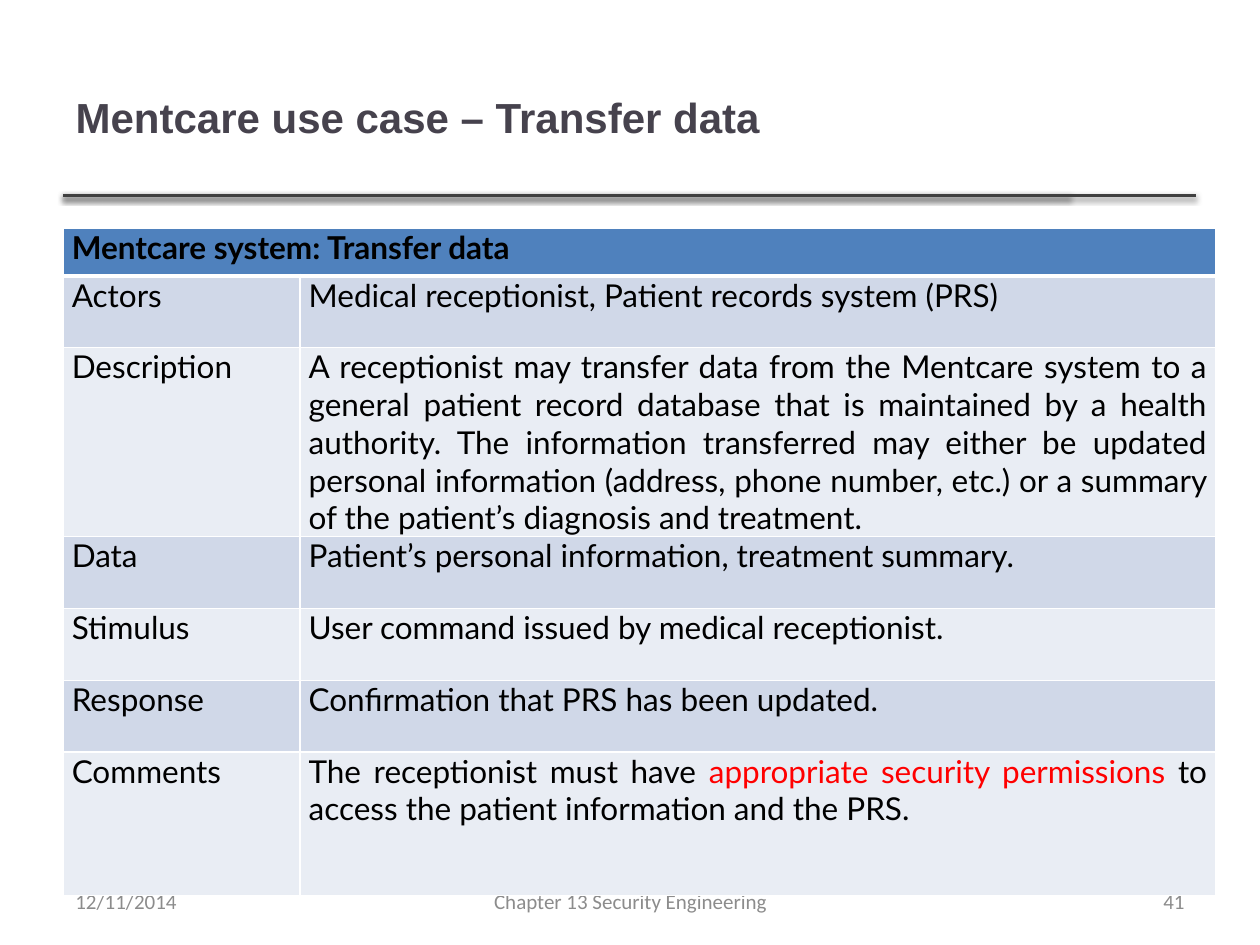
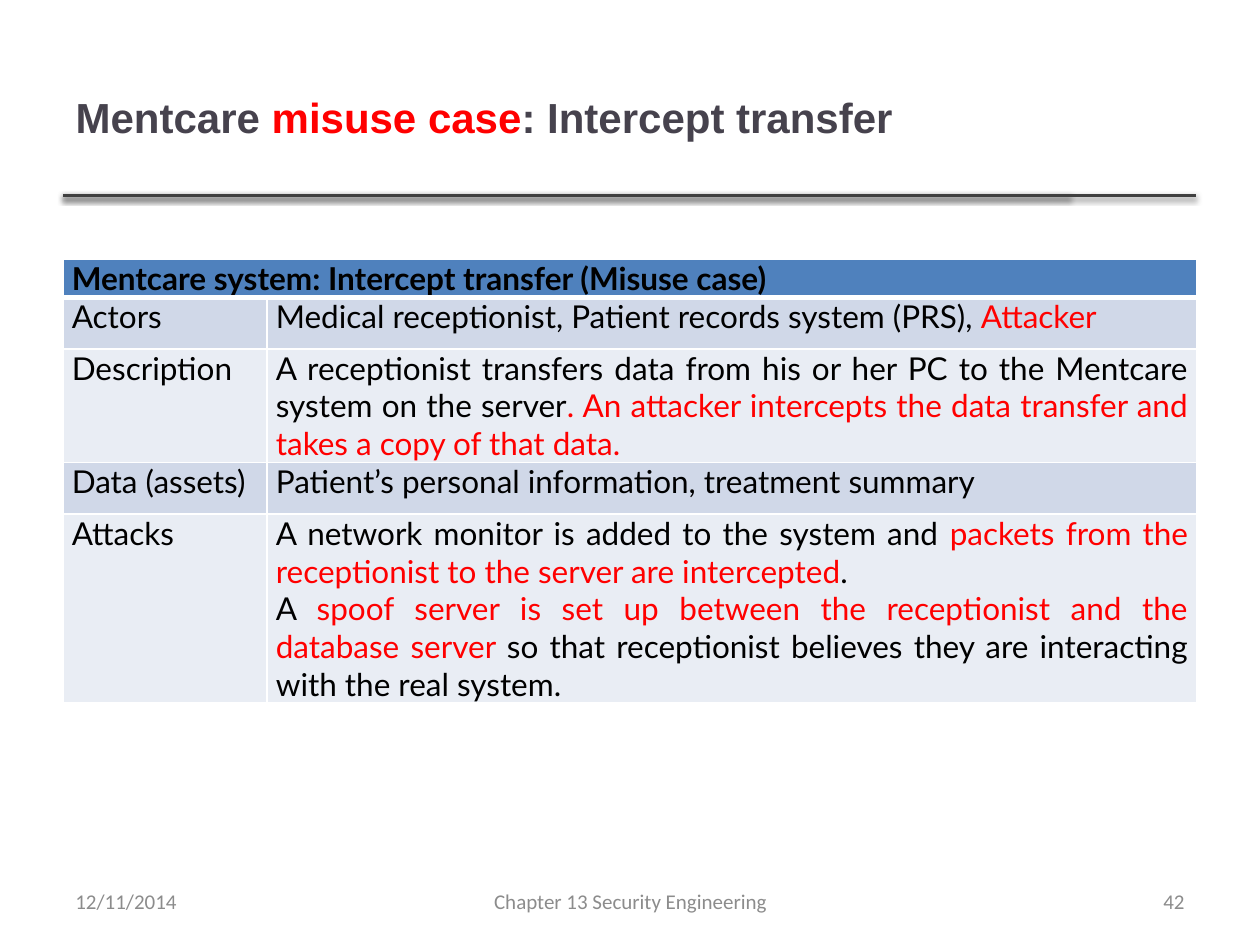
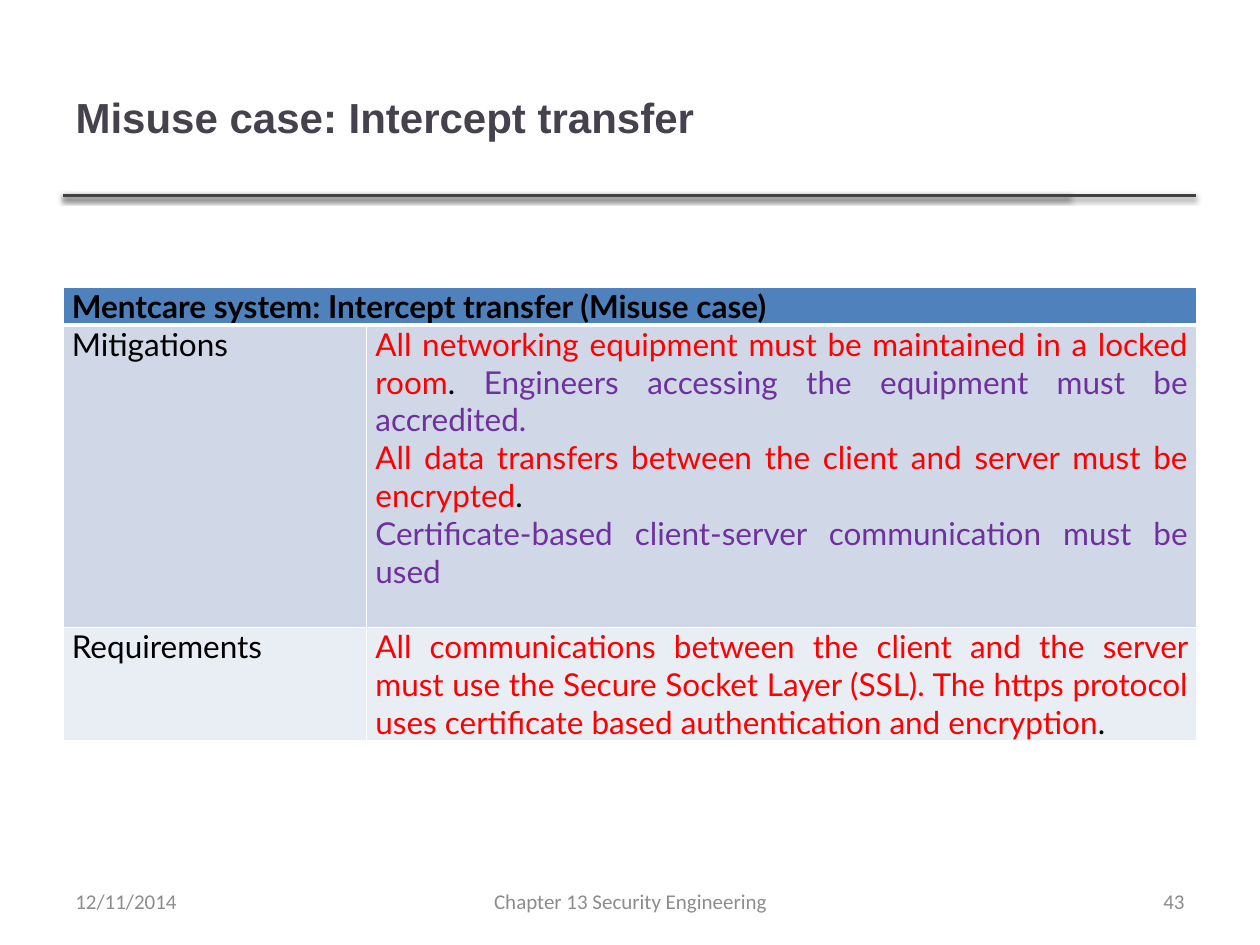
from lxml.etree import SubElement
from pptx import Presentation
from pptx.dml.color import RGBColor
from pptx.enum.shapes import MSO_CONNECTOR
from pptx.enum.text import MSO_ANCHOR, PP_ALIGN
from pptx.oxml import parse_xml
from pptx.oxml.ns import nsdecls, qn
from pptx.util import Inches, Pt

# Colours
SLATE = RGBColor(0x46, 0x42, 0x4D)
RULE = RGBColor(0x40, 0x40, 0x40)
GREY = RGBColor(0x8C, 0x8C, 0x8C)
BLACK = RGBColor(0, 0, 0)
RED = RGBColor(0xFF, 0, 0)
PURPLE = RGBColor(0x70, 0x30, 0xA0)
HEAD = RGBColor(0x4F, 0x81, 0xBD)
BANDS = [RGBColor(0xD0, 0xD8, 0xE8), RGBColor(0xE9, 0xED, 0xF4)]

# Content: a paragraph is a list of runs, a run is text or (text, colour)
SLIDES = [
    {
        "title": ["Mentcare use case – Transfer data"],
        "head": "Mentcare system: Transfer data",
        "top": 1.81, "cols": [1.88, 7.27],
        "heights": [0.38, 0.57, 1.5, 0.57, 0.57, 0.57, 1.14],
        "rows": [
            ("Actors", [["Medical receptionist, Patient records system (PRS)"]]),
            ("Description", [[
                "A receptionist may transfer data from the Mentcare system to a "
                "general patient record database that is maintained by a health "
                "authority. The information transferred may either be updated "
                "personal information (address, phone number, etc.) or a summary "
                "of the patient’s diagnosis and treatment."]]),
            ("Data", [["Patient’s personal information, treatment summary."]]),
            ("Stimulus", [["User command issued by medical receptionist."]]),
            ("Response", [["Confirmation that PRS has been updated."]]),
            ("Comments", [[
                "The receptionist must have ",
                ("appropriate security permissions", RED),
                " to access the patient information and the PRS."]]),
        ],
    },
    {
        "title": ["Mentcare ", ("misuse case", RED), ": Intercept transfer"],
        "head": "Mentcare system: Intercept transfer (Misuse case)",
        "top": 2.06, "cols": [1.62, 7.38],
        "heights": [0.3, 0.41, 0.9, 0.41, 1.5],
        "rows": [
            ("Actors", [["Medical receptionist, Patient records system (PRS), ",
                         ("Attacker", RED)]]),
            ("Description", [[
                "A receptionist transfers data from his or her PC to the Mentcare "
                "system on the server",
                (". An attacker intercepts the data transfer and takes a copy of "
                 "that data.", RED)]]),
            ("Data (assets)", [["Patient’s personal information, treatment summary"]]),
            ("Attacks", [
                ["A network monitor is added to the system and ",
                 ("packets from the receptionist to the server are intercepted", RED),
                 "."],
                ["A ",
                 ("spoof server is set up between the receptionist and the "
                  "database server ", RED),
                 "so that receptionist believes they are interacting with the "
                 "real system."]]),
        ],
    },
    {
        "title": ["Misuse case: Intercept transfer"],
        "head": "Mentcare system: Intercept transfer (Misuse case)",
        "top": 2.28, "cols": [2.41, 6.59],
        "heights": [0.3, 2.4, 0.9],
        "rows": [
            ("Mitigations", [
                [("All networking equipment must be maintained in a locked room", RED),
                 ". ",
                 ("Engineers accessing the equipment must be accredited.", PURPLE)],
                [("All data transfers between the client and server must be "
                  "encrypted", RED), "."],
                [("Certificate-based client-server communication must be used",
                  PURPLE)]]),
            ("Requirements", [[
                ("All communications between the client and the server must use "
                 "the Secure Socket Layer (SSL). The https protocol uses "
                 "certificate based authentication and encryption", RED), "."]]),
        ],
    },
]
FIRST = 41
LEFT = 0.5
RULE_Y = 1.55
RULE_ENDS = [8.49, 9.49]
FOOTER = [  # left, width, alignment, text
    (0.5, 2.33, PP_ALIGN.LEFT, "12/11/2014"),
    (3.42, 3.17, PP_ALIGN.CENTER, "Chapter 13 Security Engineering"),
    (7.17, 2.33, PP_ALIGN.RIGHT, "{page}"),
]


def write(frame, paras, face, size, color, bold=False, align=PP_ALIGN.LEFT):
    for i, runs in enumerate(paras):
        para = frame.paragraphs[0] if i == 0 else frame.add_paragraph()
        para.alignment = align
        para.font.name, para.font.size, para.font.bold = face, Pt(size), bold
        for item in runs:
            text, tint = (item, color) if isinstance(item, str) else item
            run = para.add_run()
            run.text = text
            run.font.color.rgb = tint


def add_rule(slide, end):
    y = Inches(RULE_Y)
    line = slide.shapes.add_connector(
        MSO_CONNECTOR.STRAIGHT, Inches(LEFT), y, Inches(end), y)
    line.line.color.rgb = RULE
    line.line.width = Pt(2)
    effects = SubElement(line._element.spPr, qn("a:effectLst"))
    shadow = SubElement(effects, qn("a:outerShdw"), blurRad=str(Pt(3.1)),
                        dist=str(Pt(1.6)), dir="5400000", rotWithShape="0")
    black = SubElement(shadow, qn("a:srgbClr"), val="000000")
    SubElement(black, qn("a:alpha"), val="38000")


def add_frame(slide, title, page):
    # Title and the rules under it
    for end in RULE_ENDS:
        add_rule(slide, end)
    box = slide.shapes.title
    box.left, box.top = Inches(LEFT), Inches(0.3)
    box.width, box.height = Inches(7.98), Inches(1.25)
    box.text_frame.vertical_anchor = MSO_ANCHOR.MIDDLE
    write(box.text_frame, [title], "Arial", 24, SLATE, bold=True)
    # Footer
    for left, width, align, text in FOOTER:
        box = slide.shapes.add_textbox(
            Inches(left), Inches(6.95), Inches(width), Inches(0.4))
        box.text_frame.word_wrap = True
        box.text_frame.vertical_anchor = MSO_ANCHOR.MIDDLE
        write(box.text_frame, [[text.format(page=page)]], "Calibri", 12, GREY,
              align=align)


def fill_cell(cell, paras, fill, bold=False, base=1):
    cell.fill.solid()
    cell.fill.fore_color.rgb = fill
    cell.margin_left = cell.margin_right = Inches(0.07)
    cell.margin_top = cell.margin_bottom = 0
    write(cell.text_frame, paras, "Lato", 18, BLACK, bold, PP_ALIGN.JUSTIFY)
    # White borders come before the fill
    props = cell._tc.get_or_add_tcPr()
    for i, (side, width) in enumerate(zip("LRTB", (1, 1, 1, base))):
        props.insert(i, parse_xml(
            f'<a:ln{side} {nsdecls("a")} w="{Pt(width)}"><a:solidFill>'
            f'<a:srgbClr val="FFFFFF"/></a:solidFill></a:ln{side}>'))


def add_case(slide, data):
    cols, heights = data["cols"], data["heights"]
    table = slide.shapes.add_table(
        len(heights), len(cols), Inches(LEFT), Inches(data["top"]),
        Inches(sum(cols)), Inches(sum(heights))).table
    table.first_row = table.horz_banding = False
    for col, width in zip(table.columns, cols):
        col.width = Inches(width)
    for row, height in zip(table.rows, heights):
        row.height = Inches(height)
    table.cell(0, 0).merge(table.cell(0, 1))
    fill_cell(table.cell(0, 0), [[data["head"]]], HEAD, bold=True, base=3)
    fill_cell(table.cell(0, 1), [], HEAD, base=3)
    for i, (label, paras) in enumerate(data["rows"]):
        fill = BANDS[i % 2]
        fill_cell(table.cell(i + 1, 0), [[label]], fill)
        fill_cell(table.cell(i + 1, 1), paras, fill)


def main():
    deck = Presentation()
    deck.slide_width, deck.slide_height = Inches(10), Inches(7.5)
    for page, data in enumerate(SLIDES, FIRST):
        slide = deck.slides.add_slide(deck.slide_layouts[5])
        add_frame(slide, data["title"], page)
        add_case(slide, data)
    deck.save("out.pptx")


if __name__ == "__main__":
    main()
